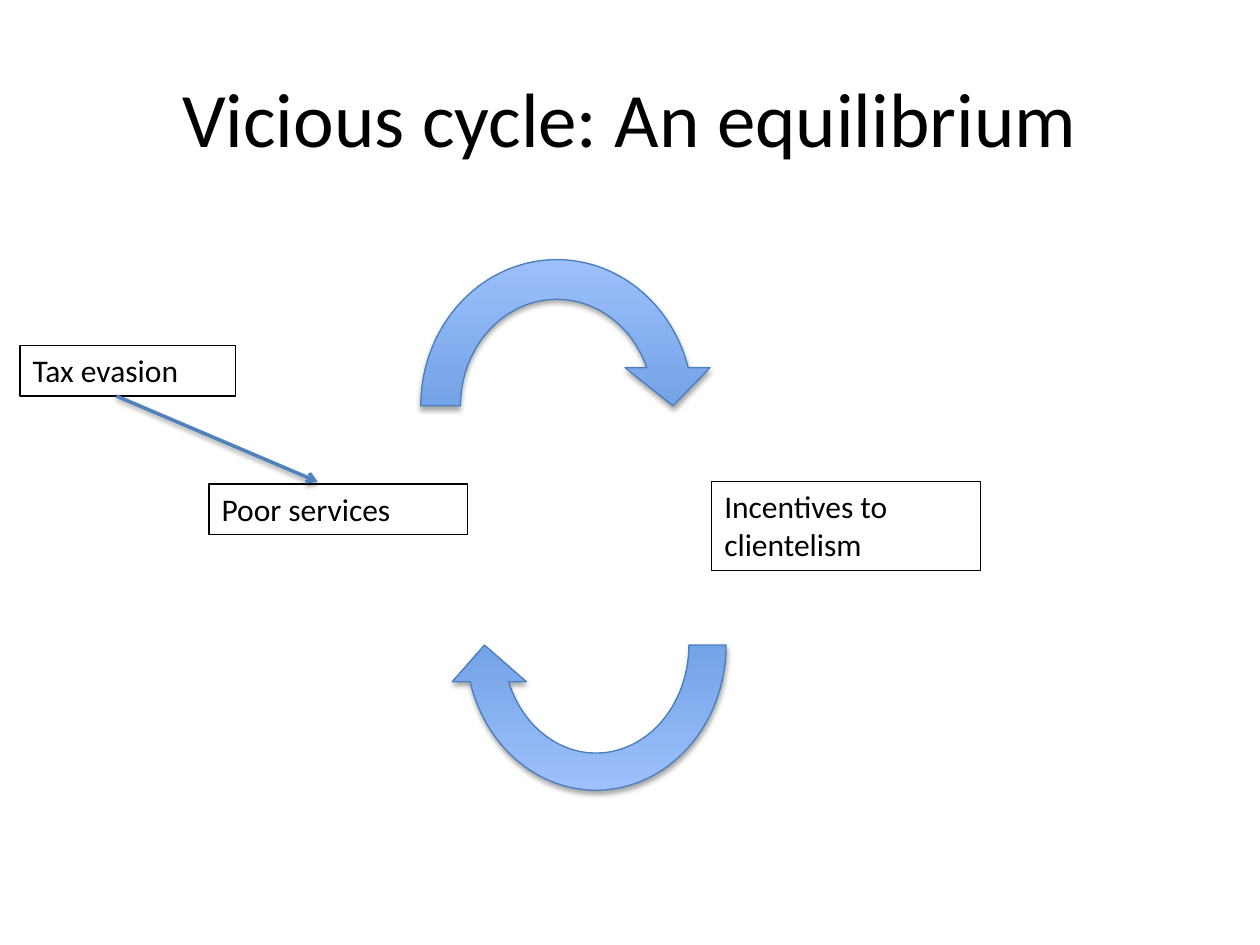
from lxml import etree
from pptx import Presentation
from pptx.dml.color import RGBColor
from pptx.enum.shapes import MSO_CONNECTOR, MSO_SHAPE
from pptx.enum.text import MSO_ANCHOR, MSO_AUTO_SIZE, PP_ALIGN
from pptx.oxml.ns import qn
from pptx.util import Pt

CIRCULAR_ARROW = MSO_SHAPE.CIRCULAR_ARROW
STRAIGHT = MSO_CONNECTOR.STRAIGHT
MIDDLE = MSO_ANCHOR.MIDDLE
FIT_SHAPE = MSO_AUTO_SIZE.SHAPE_TO_FIT_TEXT
CENTER = PP_ALIGN.CENTER

rgb = RGBColor.from_string


def add_run(p, text, size):
    r = p.add_run()
    r.text = text
    r.font.name = "Calibri"
    r.font.size = Pt(size)
    r.font.color.rgb = rgb("000000")


def add_shadow(sp, distance, opacity):
    """Give a shape or connector a soft black shadow falling straight down."""
    effects = etree.SubElement(sp.element.spPr, qn("a:effectLst"))
    shadow = etree.SubElement(
        effects, qn("a:outerShdw"), blurRad=str(Pt(3.1)), dist=str(Pt(distance)),
        dir="5400000", rotWithShape="0")
    color = etree.SubElement(shadow, qn("a:srgbClr"), val="000000")
    etree.SubElement(color, qn("a:alpha"), val=str(opacity * 1000))


prs = Presentation()
prs.slide_width, prs.slide_height = Pt(720), Pt(540)
s = prs.slides.add_slide(prs.slide_layouts[5])

title = s.shapes.title
title.left, title.top, title.width, title.height = Pt(36), Pt(21.6), Pt(648), Pt(90)
tf = title.text_frame
tf.vertical_anchor = MIDDLE
p = tf.paragraphs[0]
p.alignment = CENTER
add_run(p, "Vicious cycle: An equilibrium", 44)

cycle = s.shapes.add_group_shape().shapes

# Boxes: parent, text, left, top, width, height
boxes = [
    (cycle, "Poor services", 119.5, 276.5, 147.6, 29),
    (cycle, "Incentives to clientelism", 406.8, 275, 153.4, 51),
    (s.shapes, "Tax evasion", 11.5, 197.3, 123.1, 29),
]
for parent, text, left, top, width, height in boxes:
    sp = parent.add_textbox(Pt(left), Pt(top), Pt(width), Pt(height))
    sp.line.color.rgb = rgb("000000")
    sp.line.width = Pt(0.75)
    tf = sp.text_frame
    tf.word_wrap = True
    tf.auto_size = FIT_SHAPE
    add_run(tf.paragraphs[0], text, 18)

# Cycle arrows: left, top, width, height, rotation, head inset
arrows = [
    (227.5, 135.4, 181.4, 193, 0, 0.134),
    (255.6, 275, 169.9, 187.2, 180, 0.125),
]
for left, top, width, height, rotation, inset in arrows:
    sp = cycle.add_shape(CIRCULAR_ARROW, Pt(left), Pt(top), Pt(width), Pt(height))
    sp.rotation = rotation
    for i, value in enumerate((0.125, 11.42, 204.58, 108, inset)):
        sp.adjustments[i] = value
    sp.fill.gradient()
    sp.fill.gradient_angle = 90
    for stop, position, color in zip(sp.fill.gradient_stops, (0, 1), ("3F80CE", "A4C4FF")):
        stop.position = position
        stop.color.rgb = rgb(color)
    sp.line.color.rgb = rgb("4B7EBC")
    sp.line.width = Pt(0.75)
    add_shadow(sp, 1.8, 35)

link = s.shapes.add_connector(STRAIGHT, Pt(66.5), Pt(226.3), Pt(181.5), Pt(275.3))
link.line.color.rgb = rgb("4F81BD")
link.line.width = Pt(2)
etree.SubElement(link.element.spPr.find(qn("a:ln")), qn("a:tailEnd"), type="arrow")
add_shadow(link, 1.6, 38)

prs.save("out.pptx")
